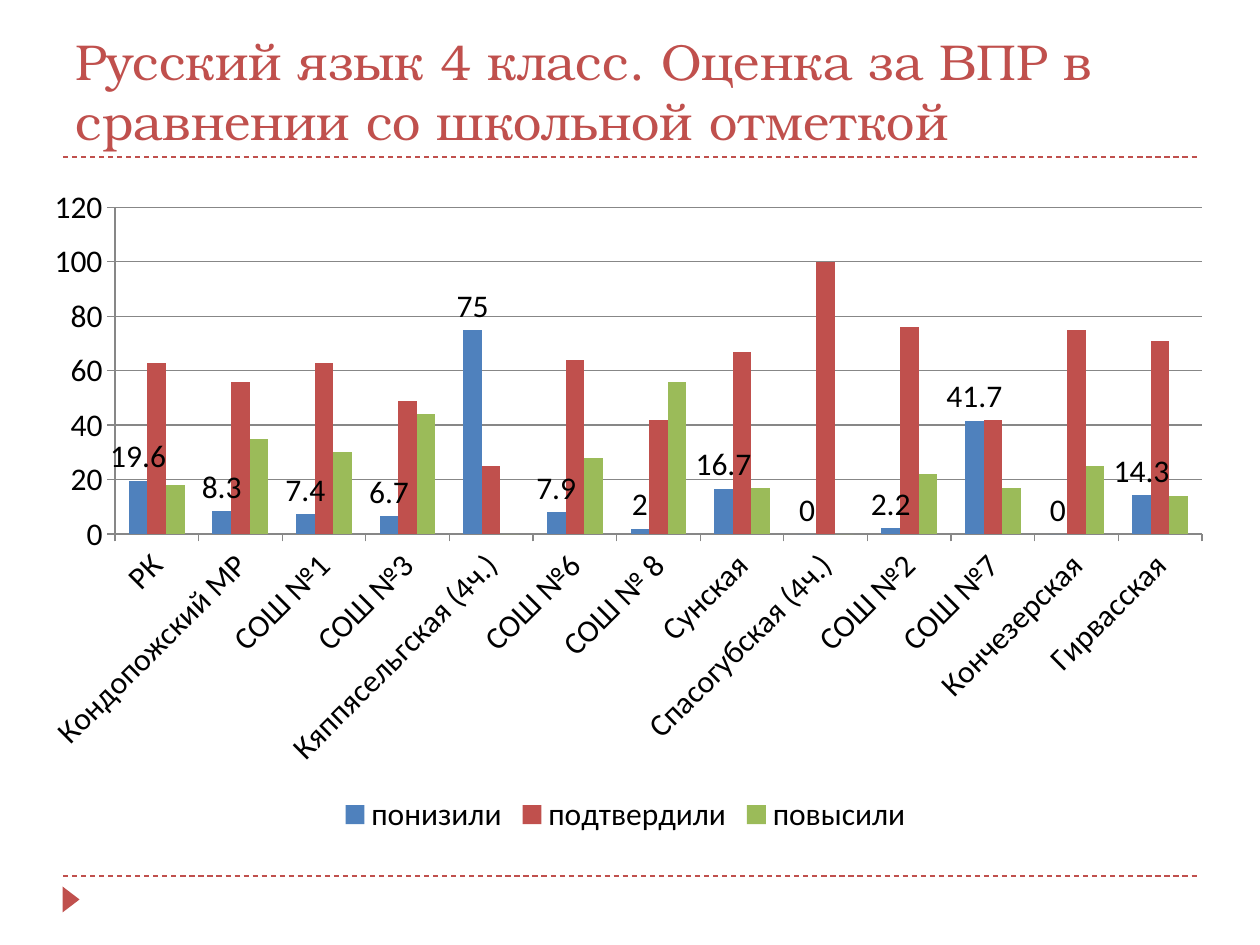
from lxml import etree
from pptx import Presentation
from pptx.chart.data import CategoryChartData
from pptx.dml.color import RGBColor
from pptx.enum.chart import (XL_CHART_TYPE as ChartType, XL_LABEL_POSITION as LabelPos,
                             XL_LEGEND_POSITION as LegendPos, XL_TICK_MARK as Tick)
from pptx.enum.dml import MSO_LINE
from pptx.enum.shapes import MSO_CONNECTOR, MSO_SHAPE
from pptx.enum.text import MSO_ANCHOR, MSO_AUTO_SIZE, PP_ALIGN
from pptx.oxml.ns import qn
from pptx.util import Emu, Pt

EMU_PER_PX = 914400 / 126
RED, GRAY = "C0504D", "878787"
TITLE = "Русский язык 4 класс. Оценка за ВПР в сравнении со школьной отметкой"
SCHOOLS = ["РК", "Кондопожский МР", "СОШ №1", "СОШ №3", "Кяппясельгская (4ч.)",
           "СОШ №6", "СОШ № 8", "Сунская", "Спасогубская (4ч.)", "СОШ №2",
           "СОШ №7", "Кончезерская", "Гирвасская"]
SERIES = [
    ("понизили", "4F81BD", [19.6, 8.3, 7.4, 6.7, 75, 7.9, 2, 16.7, 0, 2.2, 41.7, 0, 14.3]),
    ("подтвердили", RED, [63, 56, 63, 49, 25, 64, 42, 67, 100, 76, 42, 75, 71]),
    ("повысили", "9BBB59", [18, 35, 30, 44, 0, 28, 56, 17, 0, 22, 17, 25, 14]),
]


def px(*lengths):
    """Turn pixel lengths into a list of EMU."""
    return [Emu(round(n * EMU_PER_PX)) for n in lengths]


def rgb(code):
    """Return the colour for a hex string."""
    return RGBColor.from_string(code)


def add_rule(slide, y):
    """Draw a dashed rule across the slide."""
    line = slide.shapes.add_connector(MSO_CONNECTOR.STRAIGHT, *px(63, y, 1197, y))
    line.line.color.rgb = rgb(RED)
    line.line.width = Pt(0.75)
    line.line.dash_style = MSO_LINE.DASH
    etree.SubElement(line._element.spPr, qn("a:effectLst"))


def add_marker(slide):
    """Draw the triangle that points right at the foot."""
    sp = slide.shapes.add_shape(MSO_SHAPE.ISOSCELES_TRIANGLE, *px(58, 891, 26, 17))
    sp.rotation = 90
    sp.shadow.inherit = False
    sp.fill.solid()
    sp.fill.fore_color.rgb = rgb(RED)
    sp.line.fill.background()


def set_title(slide):
    """Place and format the title placeholder."""
    title = slide.shapes.title
    title.left, title.top, title.width, title.height = px(63, 21, 1134, 136)
    tf = title.text_frame
    tf.word_wrap = True
    tf.auto_size = MSO_AUTO_SIZE.NONE
    tf.vertical_anchor = MSO_ANCHOR.BOTTOM
    p = tf.paragraphs[0]
    p.alignment = PP_ALIGN.LEFT
    r = p.add_run()
    r.text = TITLE
    r.font.name = "TeX Gyre Bonum"
    r.font.size = Pt(28.8)
    r.font.color.rgb = rgb(RED)


def format_axes(chart):
    """Set ticks, lines and gridlines."""
    for axis in (chart.category_axis, chart.value_axis):
        axis.major_tick_mark = Tick.OUTSIDE
        axis.minor_tick_mark = Tick.NONE
        axis.format.line.color.rgb = rgb(GRAY)
    value = chart.value_axis
    value.minimum_scale, value.maximum_scale, value.major_unit = 0, 120, 20
    value.has_major_gridlines = True
    value.major_gridlines.format.line.color.rgb = rgb(GRAY)


def add_marks_chart(slide):
    """Add the clustered column chart of marks by school."""
    data = CategoryChartData()
    data.categories = SCHOOLS
    for name, _, values in SERIES:
        data.add_series(name, values)
    chart = slide.shapes.add_chart(
        ChartType.COLUMN_CLUSTERED, *px(25, 175, 1201, 665), data).chart
    chart.has_title = False
    chart.font.name = "Calibri"
    chart.font.size = Pt(18)
    chart.font.color.rgb = rgb("000000")
    chart.has_legend = True
    chart.legend.position = LegendPos.BOTTOM
    chart.legend.include_in_layout = False
    format_axes(chart)
    plot = chart.plots[0]
    plot.gap_width = 150
    plot.vary_by_categories = False
    for series, (_, color, _) in zip(plot.series, SERIES):
        series.invert_if_negative = False
        series.format.fill.solid()
        series.format.fill.fore_color.rgb = rgb(color)
    labels = plot.series[0].data_labels
    labels.show_value = True
    labels.position = LabelPos.OUTSIDE_END


def main():
    """Build and save the slide."""
    prs = Presentation()
    prs.slide_width, prs.slide_height = px(1260, 945)
    slide = prs.slides.add_slide(prs.slide_layouts[5])
    for y in (876, 157):
        add_rule(slide, y)
    add_marker(slide)
    set_title(slide)
    add_marks_chart(slide)
    prs.save("out.pptx")


if __name__ == "__main__":
    main()
